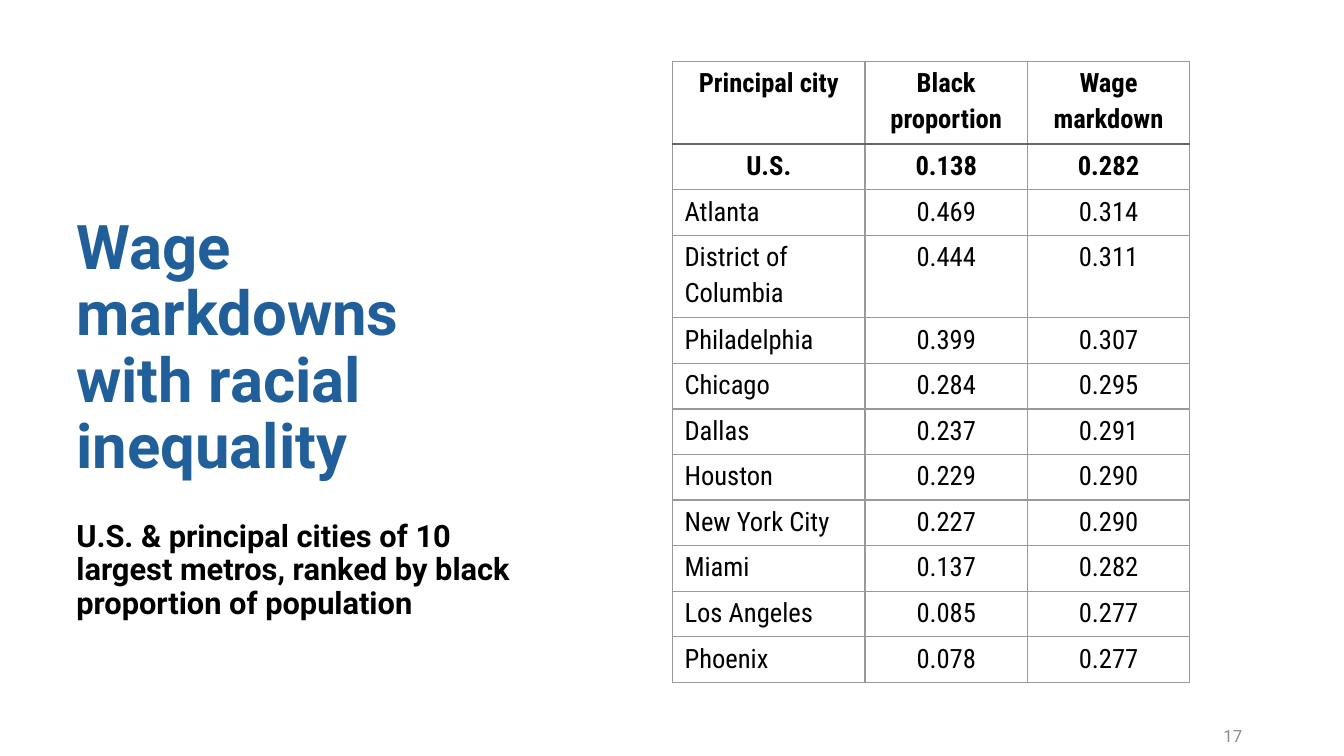
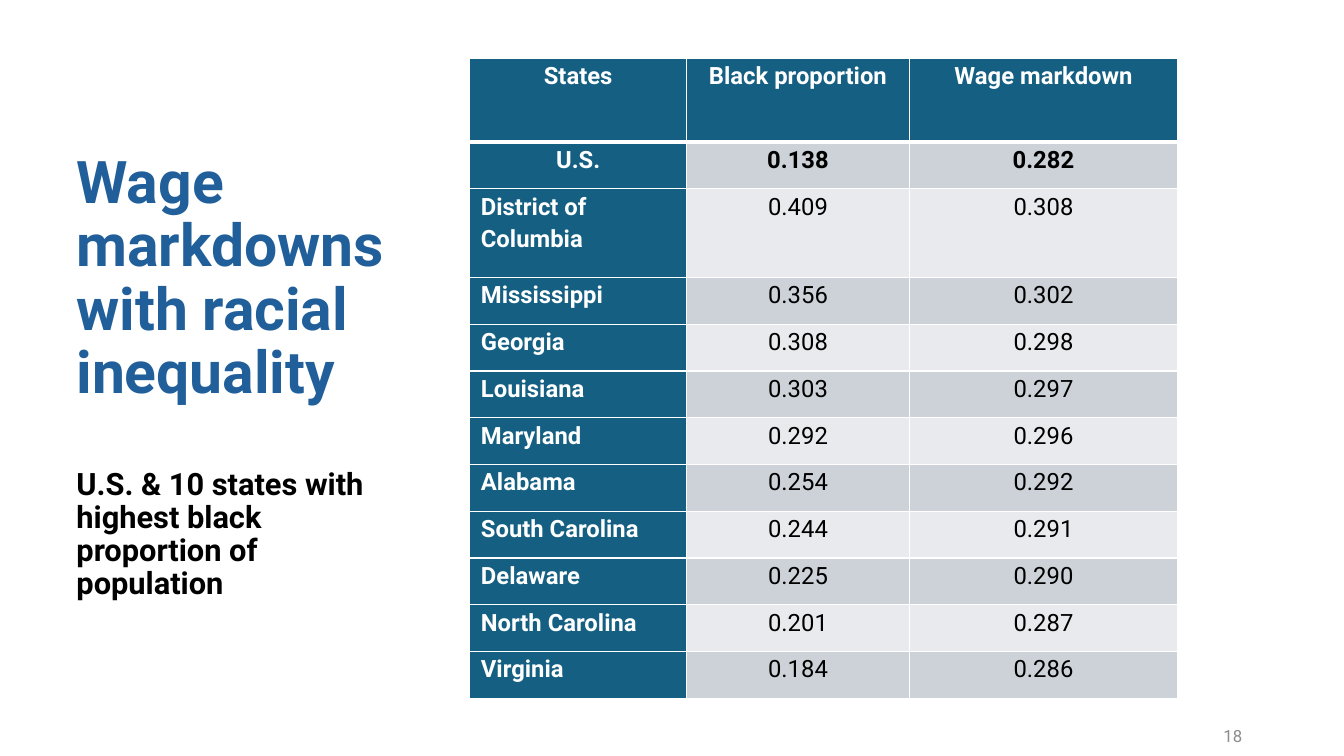
from dataclasses import dataclass
from typing import Optional

from lxml.etree import SubElement
from pptx import Presentation
from pptx.dml.color import RGBColor
from pptx.enum.text import MSO_ANCHOR, PP_ALIGN
from pptx.oxml.ns import qn
from pptx.util import Inches, Pt

BLACK = RGBColor(0x00, 0x00, 0x00)
WHITE = RGBColor(0xFF, 0xFF, 0xFF)
TITLE_BLUE = RGBColor(0x21, 0x5F, 0x9A)
NUMBER_GRAY = RGBColor(0x8C, 0x8C, 0x8C)
GRID_GRAY = RGBColor(0x99, 0x99, 0x99)
RULE_GRAY = RGBColor(0x66, 0x66, 0x66)
TEAL = RGBColor(0x15, 0x60, 0x82)
BAND_DARK = RGBColor(0xCC, 0xD2, 0xD8)
BAND_LIGHT = RGBColor(0xE8, 0xEA, 0xED)

TITLE = "Wage markdowns with racial inequality"
FONT = "Roboto"
CONDENSED = "Roboto Condensed"
LEFT = 0.66
TITLE_TOP = 0.74
WRAPPED_NAME = "District of Columbia"


@dataclass(frozen=True)
class TextStyle:
    size: float
    color: RGBColor
    bold: bool = False
    font: str = FONT
    align: PP_ALIGN = PP_ALIGN.LEFT
    anchor: MSO_ANCHOR = MSO_ANCHOR.TOP
    line_spacing: float = 1.0
    before: float = 0
    after: float = 0


@dataclass(frozen=True)
class Box:
    left: float
    top: float
    width: float
    height: float


@dataclass(frozen=True)
class TableStyle:
    font: str
    size: float
    side_margin: float
    top_margin: float
    grid: RGBColor
    rule: RGBColor
    rule_width: float
    name_color: RGBColor = BLACK
    name_fill: Optional[RGBColor] = None
    bands: tuple[Optional[RGBColor], ...] = (None,)
    bold_names: bool = False


@dataclass(frozen=True)
class WageTable:
    box: Box
    columns: tuple[float, ...]
    head_height: float
    wrapped_height: float
    style: TableStyle
    rows: tuple[tuple[str, str, str], ...]


@dataclass(frozen=True)
class WagePage:
    number: str
    title_box: Box
    title_size: float
    subtitle: str
    subtitle_box: Box
    table: WageTable


PLAIN = TableStyle(CONDENSED, 19, 0.12, 0.02, GRID_GRAY, RULE_GRAY, 1.5)
BANDED = TableStyle(FONT, 17, 0.11, 0, WHITE, WHITE, 3, WHITE, TEAL,
                    (BAND_DARK, BAND_LIGHT), True)

PAGES = (
    WagePage(
        "17", Box(LEFT, TITLE_TOP, 4.24, 4.09), 44,
        "U.S. & principal cities of 10 largest metros, "
        "ranked by black proportion of population",
        Box(LEFT, 5.12, 4.56, 1.13),
        WageTable(Box(6.67, 0.61, 5.14, 6.16), (1.91, 1.61, 1.61), 0.82, 0.82, PLAIN, (
            ("Principal city", "Black proportion", "Wage markdown"),
            ("U.S.", "0.138", "0.282"),
            ("Atlanta", "0.469", "0.314"),
            (WRAPPED_NAME, "0.444", "0.311"),
            ("Philadelphia", "0.399", "0.307"),
            ("Chicago", "0.284", "0.295"),
            ("Dallas", "0.237", "0.291"),
            ("Houston", "0.229", "0.290"),
            ("New York City", "0.227", "0.290"),
            ("Miami", "0.137", "0.282"),
            ("Los Angeles", "0.085", "0.277"),
            ("Phoenix", "0.078", "0.277"),
        )),
    ),
    WagePage(
        "18", Box(LEFT, TITLE_TOP, 3.49, 3.34), 42,
        "U.S. & 10 states with highest black proportion of population",
        Box(LEFT, 4.6, 3.49, 1.46),
        WageTable(Box(4.66, 0.58, 7.02, 6.35), (2.15, 2.21, 2.66), 0.83, 0.88, BANDED, (
            ("States", "Black proportion", "Wage markdown"),
            ("U.S.", "0.138", "0.282"),
            (WRAPPED_NAME, "0.409", "0.308"),
            ("Mississippi", "0.356", "0.302"),
            ("Georgia", "0.308", "0.298"),
            ("Louisiana", "0.303", "0.297"),
            ("Maryland", "0.292", "0.296"),
            ("Alabama", "0.254", "0.292"),
            ("South Carolina", "0.244", "0.291"),
            ("Delaware", "0.225", "0.290"),
            ("North Carolina", "0.201", "0.287"),
            ("Virginia", "0.184", "0.286"),
        )),
    ),
)


def write_text(frame, text: str, style: TextStyle) -> None:
    frame.text = text
    frame.word_wrap = True
    paragraph = frame.paragraphs[0]
    paragraph.alignment = style.align
    paragraph.line_spacing = style.line_spacing
    paragraph.space_before = Pt(style.before)
    paragraph.space_after = Pt(style.after)
    font = paragraph.runs[0].font
    font.name = style.font
    font.size = Pt(style.size)
    font.bold = style.bold
    font.color.rgb = style.color


def add_text(page, box: Box, text: str, style: TextStyle) -> None:
    shape = page.shapes.add_textbox(Inches(box.left), Inches(box.top),
                                    Inches(box.width), Inches(box.height))
    write_text(shape.text_frame, text, style)
    shape.text_frame.vertical_anchor = style.anchor


def add_border(cell, side: str, color: RGBColor, width: float) -> None:
    line = SubElement(cell._tc.get_or_add_tcPr(), qn(f"a:ln{side}"), w=str(Pt(width)))
    fill = SubElement(line, qn("a:solidFill"))
    SubElement(fill, qn("a:srgbClr"), val=str(color))


def format_cell(cell, text: str, row: int, column: int, style: TableStyle) -> None:
    is_name = row == 0 or column == 0
    write_text(cell.text_frame, text, TextStyle(
        size=style.size,
        color=style.name_color if is_name else BLACK,
        bold=row < 2 or (is_name and style.bold_names),
        font=style.font,
        align=PP_ALIGN.LEFT if column == 0 and row > 1 else PP_ALIGN.CENTER,
        line_spacing=1.15,
        after=8,
    ))
    cell.margin_left = cell.margin_right = Inches(style.side_margin)
    cell.margin_top = Inches(style.top_margin)
    cell.margin_bottom = 0
    for side in ("L", "R", "T", "B"):
        if (row, side) in ((0, "B"), (1, "T")):
            add_border(cell, side, style.rule, style.rule_width)
        else:
            add_border(cell, side, style.grid, 1)
    fill = style.name_fill if is_name else style.bands[(row - 1) % len(style.bands)]
    if fill is None:
        cell.fill.background()
    else:
        cell.fill.solid()
        cell.fill.fore_color.rgb = fill


def add_wage_table(page, data: WageTable) -> None:
    box = data.box
    table = page.shapes.add_table(len(data.rows), len(data.columns),
                                  Inches(box.left), Inches(box.top),
                                  Inches(box.width), Inches(box.height)).table
    table.first_row = table.horz_banding = False
    for column, width in zip(table.columns, data.columns):
        column.width = Inches(width)
    regular = (box.height - data.head_height - data.wrapped_height) / (len(data.rows) - 2)
    for row, values in enumerate(data.rows):
        if row == 0:
            height = data.head_height
        else:
            height = data.wrapped_height if values[0] == WRAPPED_NAME else regular
        table.rows[row].height = Inches(height)
        for column, text in enumerate(values):
            format_cell(table.cell(row, column), text, row, column, data.style)


def add_page(deck, content: WagePage) -> None:
    page = deck.slides.add_slide(deck.slide_layouts[6])
    add_text(page, content.title_box, TITLE,
             TextStyle(content.title_size, TITLE_BLUE, bold=True,
                       anchor=MSO_ANCHOR.BOTTOM, line_spacing=0.9))
    add_text(page, content.subtitle_box, content.subtitle,
             TextStyle(22, BLACK, bold=True, line_spacing=0.9, before=10))
    add_text(page, Box(9.42, 7.1, 3, 0.4), content.number,
             TextStyle(12, NUMBER_GRAY, align=PP_ALIGN.RIGHT,
                       anchor=MSO_ANCHOR.MIDDLE, after=6))
    add_wage_table(page, content.table)


def main() -> None:
    deck = Presentation()
    deck.slide_width = Inches(13.33)
    deck.slide_height = Inches(7.5)
    for content in PAGES:
        add_page(deck, content)
    deck.save("out.pptx")


if __name__ == "__main__":
    main()
